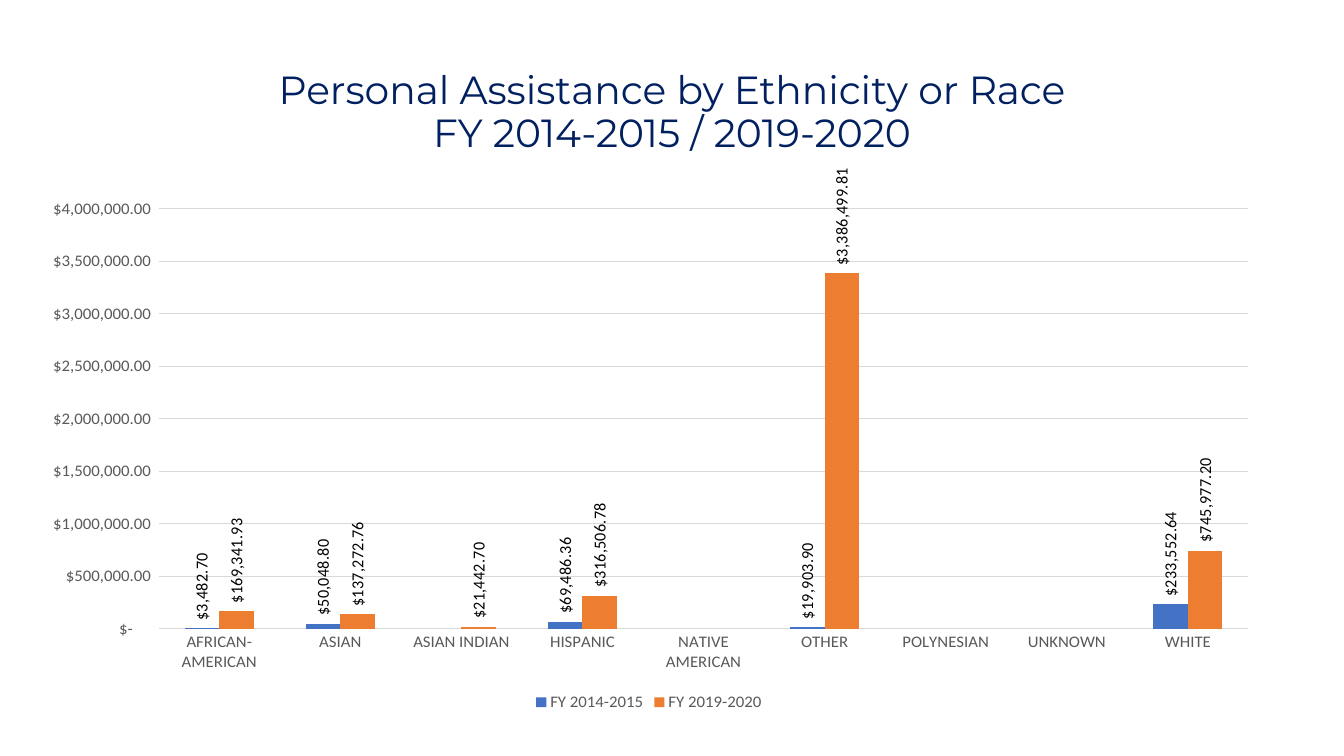
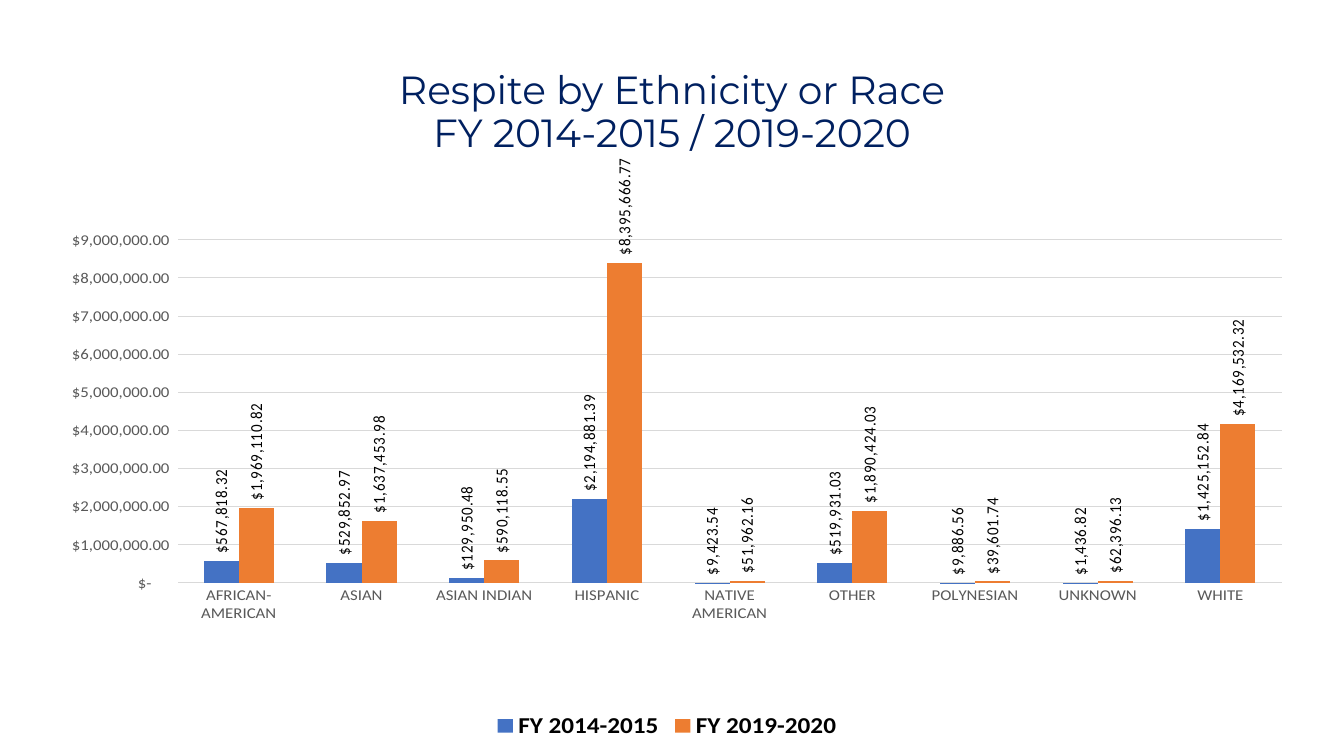
from dataclasses import dataclass

from pptx import Presentation
from pptx import util as u
from pptx.chart import data as chart_data
from pptx.dml.color import RGBColor
from pptx.enum import chart as charts, text

COLUMNS, ROWS = 160, 90
CELL = u.Inches(1 / 12)

NAVY, GREY, BLACK, GRID = "002060", "595959", "000000", "D9D9D9"
TITLE_FONT, CHART_FONT = "Montserrat", "Calibri"
MONEY = '_("$"* #,##0.00_);_("$"* \\(#,##0.00\\);_("$"* "-"??_);_(@_)'

PERIOD = "FY 2014-2015 / 2019-2020"
YEARS = ("FY 2014-2015", "FY 2019-2020")
YEAR_COLOURS = ("4472C4", "ED7D31")
GROUPS = ("AFRICAN-AMERICAN", "ASIAN", "ASIAN INDIAN", "HISPANIC", "NATIVE AMERICAN",
          "OTHER", "POLYNESIAN", "UNKNOWN", "WHITE")


@dataclass(frozen=True)
class Area:
    """A rectangle in grid columns and rows."""
    column: float
    row: float
    columns: float
    rows: float

    def box(self) -> tuple[int, ...]:
        return tuple(round(n * CELL) for n in (self.column, self.row, self.columns, self.rows))


@dataclass(frozen=True)
class PlotShare:
    """The inner plot area as shares of its chart."""
    x: float
    y: float
    w: float
    h: float


@dataclass(frozen=True)
class ServiceSlide:
    heading: str
    area: Area
    spending: tuple[tuple[float | None, ...], ...]
    legend_size: int = 12
    legend_colour: str = GREY
    legend_bold: bool = False
    plot: PlotShare | None = None


TITLE_AREA = Area(11, 4.8, 138, 17.4)

SERVICES = (
    ServiceSlide(
        "Personal Assistance by Ethnicity or Race",
        Area(2.9, 20, 148.7, 65.2),
        ((3482.70, 50048.80, None, 69486.36, None, 19903.90, None, None, 233552.64),
         (169341.93, 137272.76, 21442.70, 316506.78, None, 3386499.81, None, None, 745977.20)),
    ),
    ServiceSlide(
        "Respite by Ethnicity or Race",
        Area(4.7, 19.6, 149.4, 69),
        ((567818.32, 529852.97, 129950.48, 2194881.39, 9423.54, 519931.03, 9886.56, 1436.82,
          1425152.84),
         (1969110.82, 1637453.98, 590118.55, 8395666.77, 51962.16, 1890424.03, 39601.74,
          62396.13, 4169532.32)),
        legend_size=18, legend_colour=BLACK, legend_bold=True,
        plot=PlotShare(0.11, 0.03, 0.88, 0.66),
    ),
)


def colour(value: str) -> RGBColor:
    return RGBColor.from_string(value)


def set_font(font, name: str, size: float, shade: str, bold: bool = False) -> None:
    font.name, font.size, font.bold = name, u.Pt(size), bold
    font.color.rgb = colour(shade)


def add_title(slide, heading: str) -> None:
    frame = slide.shapes.add_textbox(*TITLE_AREA.box()).text_frame
    frame.word_wrap = True
    frame.vertical_anchor = text.MSO_ANCHOR.MIDDLE
    paragraph = frame.paragraphs[0]
    paragraph.text = f"{heading}\v{PERIOD}"
    paragraph.alignment = text.PP_ALIGN.CENTER
    paragraph.line_spacing = 0.9
    set_font(paragraph.font, TITLE_FONT, 28, NAVY)


def style_axis(axis) -> None:
    axis.major_tick_mark = axis.minor_tick_mark = charts.XL_TICK_MARK.NONE
    axis.format.line.fill.background()
    set_font(axis.tick_labels.font, CHART_FONT, 12, GREY)


def style_series(series, shade: str) -> None:
    series.format.fill.solid()
    series.format.fill.fore_color.rgb = colour(shade)
    series.invert_if_negative = False
    labels = series.data_labels
    labels.show_value = True
    labels.position = charts.XL_LABEL_POSITION.OUTSIDE_END
    labels.number_format, labels.number_format_is_linked = MONEY, False
    set_font(labels.font, CHART_FONT, 12, BLACK)
    for body in labels._element.xpath("c:txPr/a:bodyPr"):
        body.set("rot", "-5400000")
        body.set("vert", "horz")


def place_plot(chart, plot: PlotShare) -> None:
    """Fix the inner plot area, which python-pptx leaves automatic."""
    area = chart._chartSpace.chart.plotArea
    layout = area.find("{*}layout")
    if layout is None:
        layout = area.makeelement(area.tag.replace("plotArea", "layout"))
        area.insert(0, layout)

    def add(parent, name: str, value: str | None = None):
        child = parent.makeelement(area.tag.replace("plotArea", name))
        if value is not None:
            child.set("val", value)
        parent.append(child)
        return child

    manual = add(layout, "manualLayout")
    for name, value in (("layoutTarget", "inner"), ("xMode", "edge"), ("yMode", "edge")):
        add(manual, name, value)
    for name in ("x", "y", "w", "h"):
        add(manual, name, str(getattr(plot, name)))


def add_spending_chart(slide, service: ServiceSlide) -> None:
    spending = chart_data.CategoryChartData(number_format=MONEY)
    spending.categories = GROUPS
    for year, amounts in zip(YEARS, service.spending):
        spending.add_series(year, amounts)
    chart = slide.shapes.add_chart(
        charts.XL_CHART_TYPE.COLUMN_CLUSTERED, *service.area.box(), spending).chart
    set_font(chart.font, CHART_FONT, 10, BLACK)
    chart.has_title = False

    columns = chart.plots[0]
    columns.gap_width, columns.overlap, columns.vary_by_categories = 150, 0, False
    for series, shade in zip(columns.series, YEAR_COLOURS):
        style_series(series, shade)

    style_axis(chart.category_axis)
    amounts_axis = chart.value_axis
    style_axis(amounts_axis)
    amounts_axis.tick_labels.number_format = MONEY
    amounts_axis.tick_labels.number_format_is_linked = False
    gridline = amounts_axis.major_gridlines.format.line
    gridline.color.rgb, gridline.width = colour(GRID), u.Pt(0.75)

    chart.has_legend = True
    chart.legend.position = charts.XL_LEGEND_POSITION.BOTTOM
    chart.legend.include_in_layout = False
    set_font(chart.legend.font, CHART_FONT, service.legend_size, service.legend_colour,
             service.legend_bold)
    if service.plot:
        place_plot(chart, service.plot)


def main() -> None:
    presentation = Presentation()
    presentation.slide_width, presentation.slide_height = COLUMNS * CELL, ROWS * CELL
    blank = presentation.slide_layouts[6]
    for service in SERVICES:
        slide = presentation.slides.add_slide(blank)
        add_title(slide, service.heading)
        add_spending_chart(slide, service)
    presentation.save("out.pptx")


if __name__ == "__main__":
    main()
